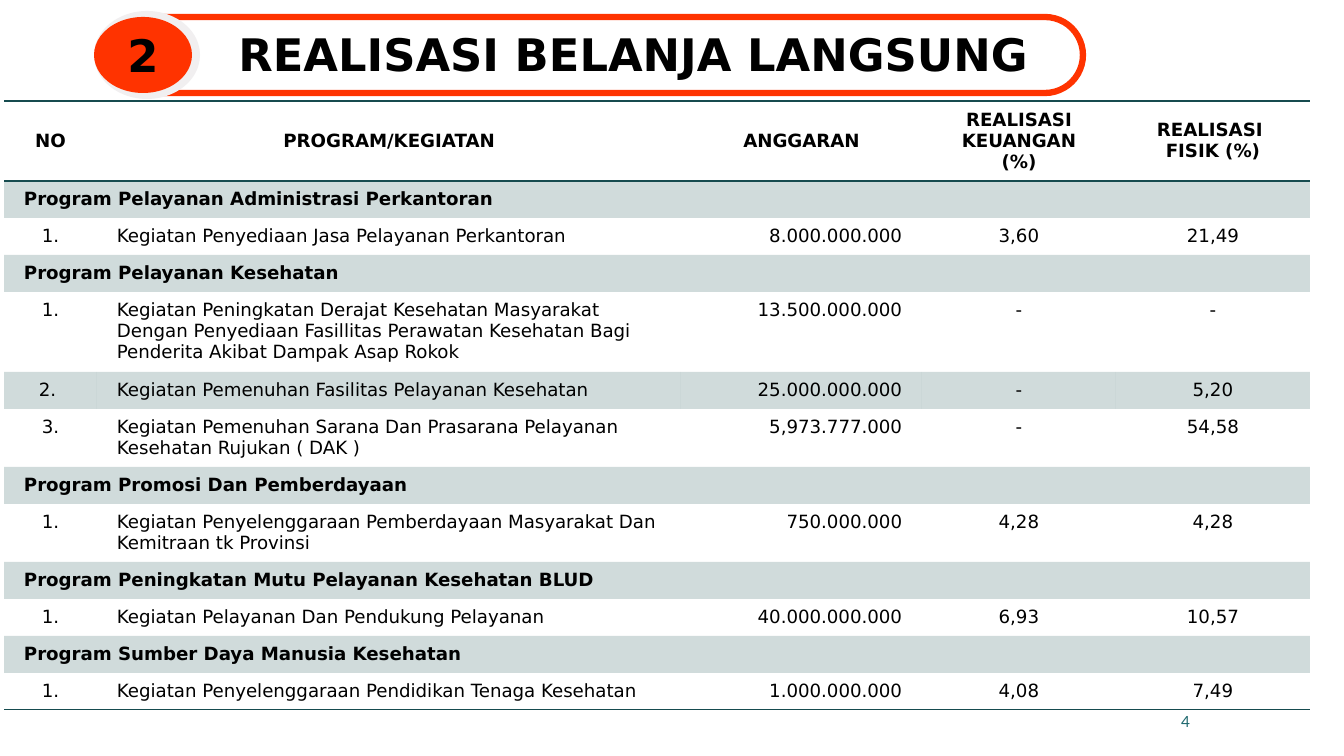
import dataclasses

import pptx
import pptx.dml.color
import pptx.enum.shapes
import pptx.enum.text
import pptx.oxml
import pptx.oxml.ns
import pptx.util

ALIGN = pptx.enum.text.PP_ALIGN
ANCHOR = pptx.enum.text.MSO_ANCHOR
SHAPE = pptx.enum.shapes.MSO_SHAPE
LEFT, MID, RIGHT = ALIGN.LEFT, ALIGN.CENTER, ALIGN.RIGHT
PLAIN = "{2D5ABB26-0587-4C30-8999-92F81FD0307C}"  # table style without grid


@dataclasses.dataclass
class Theme:
    face: str = "DejaVu Sans"
    alt: str = "Lato"
    ink: str = "000000"
    red: str = "FF3300"
    pale: str = "F1EFF0"
    teal: str = "164B4F"
    page: str = "1F696F"
    big: int = 32
    body: int = 13
    small: int = 11


def px(num):
    return pptx.util.Emu(round(num * 914400 / 100.8))


def rgb(code):
    return pptx.dml.color.RGBColor.from_string(code)


class Deck:
    def __init__(self, theme):
        self.theme = theme
        self.prs = pptx.Presentation()
        self.prs.slide_width, self.prs.slide_height = px(1344), px(756)
        self.slide = self.prs.slides.add_slide(self.prs.slide_layouts[5])

    def text(self, frame, words, size, align, bold=False, face=None, color=None):
        frame.text = words
        for par in frame.paragraphs:
            par.alignment = align
            par.font.name = face or self.theme.face
            par.font.size = pptx.util.Pt(size)
            par.font.bold = bold
            par.font.color.rgb = rgb(color or self.theme.ink)

    def title(self, words, box):
        head = self.slide.shapes.title
        head.left, head.top, head.width, head.height = map(px, box)
        frame = head.text_frame
        frame.auto_size = pptx.enum.text.MSO_AUTO_SIZE.NONE
        frame.vertical_anchor = ANCHOR.TOP
        frame.margin_left = frame.margin_right = px(15)
        frame.margin_top = frame.margin_bottom = px(7)
        self.text(frame, words, self.theme.big, MID, True)

    def shape(self, kind, box, fill=None, line=None, width=4.5):
        item = self.slide.shapes.add_shape(kind, *map(px, box))
        item.shadow.inherit = False
        if fill:
            item.fill.solid()
            item.fill.fore_color.rgb = rgb(fill)
        else:
            item.fill.background()
        if line:
            item.line.color.rgb = rgb(line)
            item.line.width = pptx.util.Pt(width)
        else:
            item.line.fill.background()
        return item

    def label(self, words, box):
        frame = self.slide.shapes.add_textbox(*map(px, box)).text_frame
        frame.word_wrap = True
        frame.vertical_anchor = ANCHOR.MIDDLE
        self.text(frame, words, self.theme.small, RIGHT,
                  face=self.theme.alt, color=self.theme.page)

    def table(self, spot, cols, rows):
        frame = self.slide.shapes.add_table(
            len(rows), len(cols), *map(px, spot), px(sum(cols)), px(sum(rows)))
        grid = frame.table
        grid.first_row = grid.horz_banding = False
        grid._tbl.tblPr.find(pptx.oxml.ns.qn("a:tableStyleId")).text = PLAIN
        for col, width in zip(grid.columns, cols):
            col.width = px(width)
        for row, height in zip(grid.rows, rows):
            row.height = px(height)
        return grid

    def cell(self, cell, words, align, bold=False, mid=False, band=False, edges=()):
        cell.margin_left = cell.margin_right = px(20)
        cell.margin_top = cell.margin_bottom = px(8)
        cell.vertical_anchor = ANCHOR.MIDDLE if mid else ANCHOR.TOP
        self.text(cell.text_frame, words, self.theme.body, align, bold)
        props = cell._tc.get_or_add_tcPr()
        for edge in edges:
            props.append(pptx.oxml.parse_xml(
                f'<a:{edge} {pptx.oxml.ns.nsdecls("a")} w="12700"><a:solidFill>'
                f'<a:srgbClr val="{self.theme.teal}"/></a:solidFill></a:{edge}>'))
        if band:
            cell.fill.solid()
            cell.fill.fore_color.rgb = rgb(self.theme.teal)
            tint = props.find(pptx.oxml.ns.qn("a:solidFill"))[0]
            tint.append(pptx.oxml.parse_xml(
                f'<a:alpha {pptx.oxml.ns.nsdecls("a")} val="20000"/>'))
        else:
            cell.fill.background()


HEADS = ["NO", "PROGRAM/KEGIATAN", "ANGGARAN", "REALISASI KEUANGAN (%)",
         "REALISASI \nFISIK (%)"]

# A row with one entry is a program; the others are its activities
ROWS = [
    ["Program Pelayanan Administrasi Perkantoran"],
    ["1.", "Kegiatan Penyediaan Jasa Pelayanan Perkantoran",
     "8.000.000.000", "3,60", "21,49"],
    ["Program Pelayanan Kesehatan"],
    ["1.", "Kegiatan Peningkatan Derajat Kesehatan Masyarakat Dengan Penyediaan "
     "Fasillitas Perawatan Kesehatan Bagi Penderita Akibat Dampak Asap Rokok",
     "13.500.000.000", "-", "-"],
    ["2. ", "Kegiatan Pemenuhan Fasilitas Pelayanan Kesehatan",
     "25.000.000.000", "-", "5,20"],
    ["3.", "Kegiatan Pemenuhan Sarana Dan Prasarana Pelayanan Kesehatan "
     "Rujukan ( DAK )", "5,973.777.000", "-", "54,58"],
    ["Program Promosi Dan Pemberdayaan"],
    ["1.", "Kegiatan Penyelenggaraan Pemberdayaan Masyarakat Dan Kemitraan "
     "tk Provinsi", "750.000.000", "4,28", "4,28"],
    ["Program Peningkatan Mutu Pelayanan Kesehatan BLUD"],
    ["1.", "Kegiatan Pelayanan Dan Pendukung Pelayanan",
     "40.000.000.000", "6,93", "10,57"],
    ["Program Sumber Daya Manusia Kesehatan"],
    ["1.", "Kegiatan Penyelenggaraan Pendidikan Tenaga Kesehatan",
     "1.000.000.000", "4,08", "7,49"],
]
COLS = [93, 584, 241, 194, 194]
TALL = [80, 36, 36, 36, 80, 36, 58, 36, 58, 36, 36, 36, 36]
SIDES = [MID, LEFT, RIGHT, MID, MID]


def main():
    theme = Theme()
    deck = Deck(theme)

    # Banner with number badge
    deck.title("REALISASI BELANJA LANGSUNG", (167, 20, 933, 70))
    pill = deck.shape(SHAPE.ROUNDED_RECTANGLE, (110, 17, 973, 76), line=theme.red)
    pill.adjustments[0] = 0.5
    deck.shape(SHAPE.OVAL, (94, 11, 106, 88), theme.pale)
    badge = deck.shape(SHAPE.OVAL, (94, 17, 98, 76), theme.red)
    badge.text_frame.vertical_anchor = ANCHOR.MIDDLE
    deck.text(badge.text_frame, "2", theme.big, MID, True)

    # Budget table
    grid = deck.table((4, 101), COLS, TALL)
    for col, words in enumerate(HEADS):
        deck.cell(grid.cell(0, col), words, MID, True, True, edges=("lnT", "lnB"))
    for num, row in enumerate(ROWS, 1):
        if len(row) == 1:
            grid.cell(num, 0).merge(grid.cell(num, len(COLS) - 1))
            deck.cell(grid.cell(num, 0), row[0], LEFT, True, num == 1, True)
            continue
        edges = ("lnB",) if num == len(ROWS) else ()
        for col, words in enumerate(row):
            deck.cell(grid.cell(num, col), words, SIDES[col],
                      band=row[0] == "2. ", edges=edges)

    # Page number
    deck.label("4", (887, 701, 313, 40))
    deck.prs.save("out.pptx")


if __name__ == "__main__":
    main()
